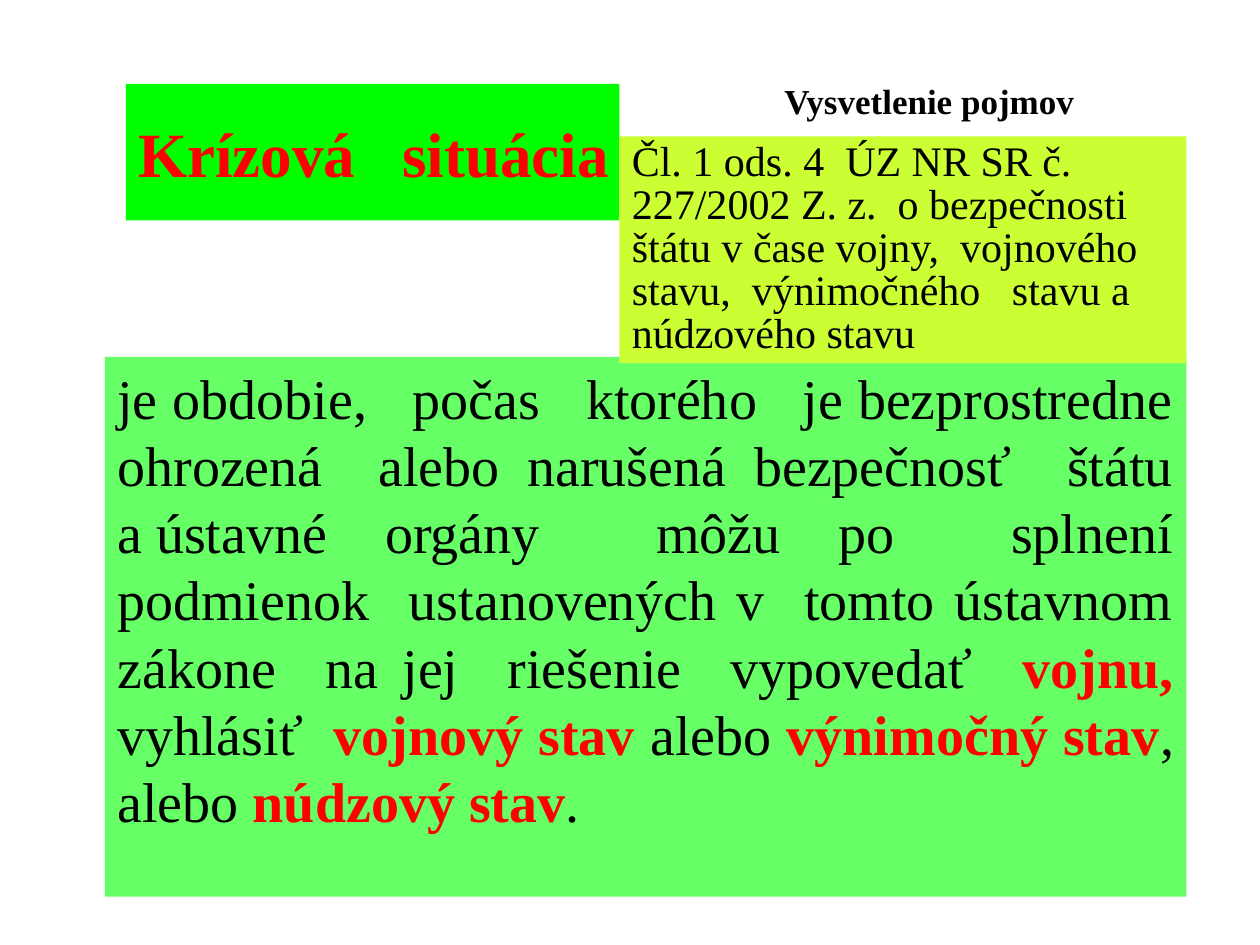
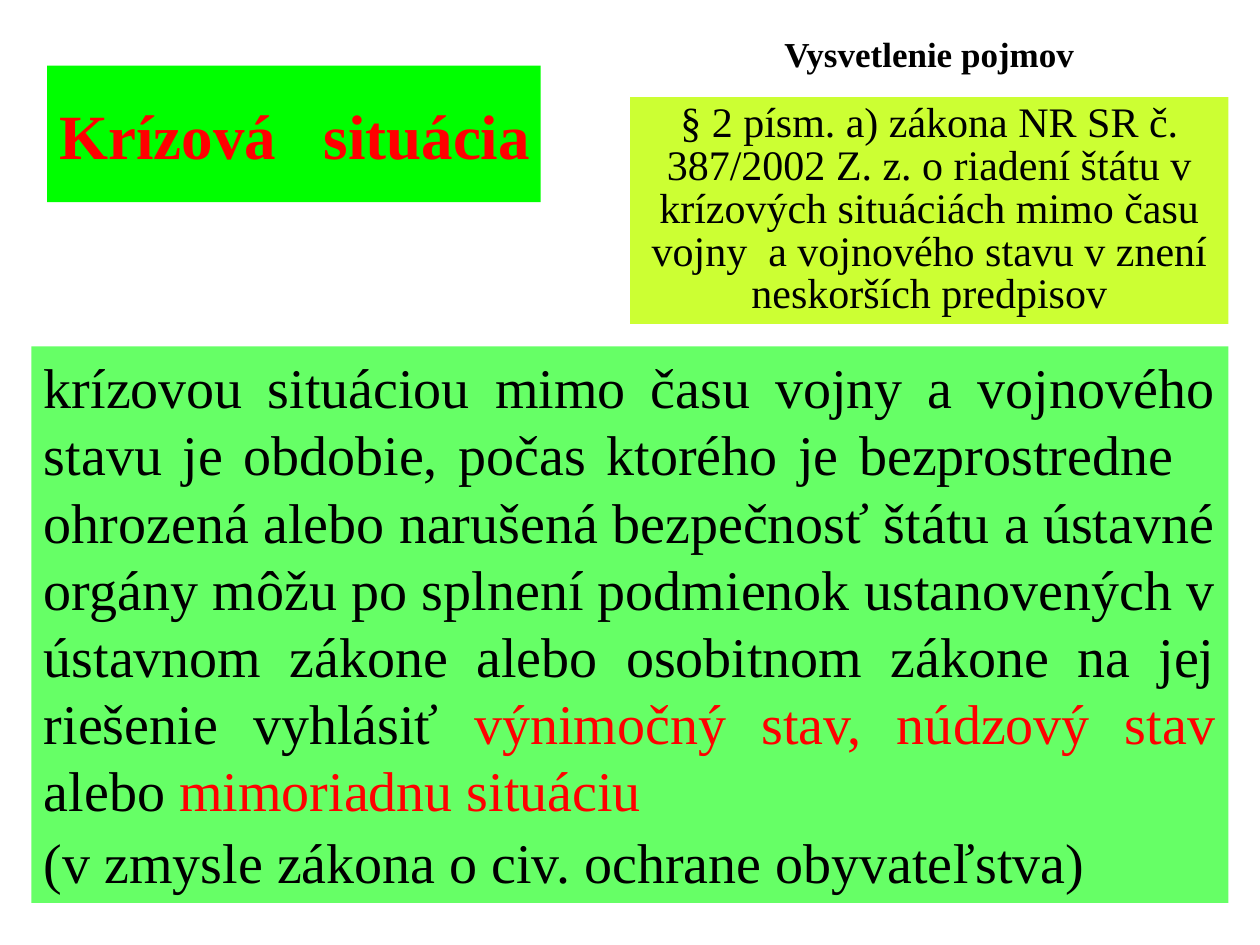
from dataclasses import dataclass

from pptx import Presentation
from pptx.dml.color import RGBColor as RGB
from pptx.enum.shapes import MSO_SHAPE as SHAPE
from pptx.enum.text import MSO_ANCHOR as ANCHOR, PP_ALIGN as ALIGN
from pptx.util import Inches, Pt

CELL = Inches(10) / 120
HARD_SPACE = chr(160)


@dataclass(frozen=True)
class Theme:
    """Colours, font and type sizes shared by the slides."""
    font: str = "Times New Roman"
    black: RGB = RGB(0x00, 0x00, 0x00)
    red: RGB = RGB(0xFF, 0x00, 0x00)
    term_fill: RGB = RGB(0x00, 0xFF, 0x00)
    text_fill: RGB = RGB(0x66, 0xFF, 0x66)
    law_fill: RGB = RGB(0xCC, 0xFF, 0x33)
    term_size: Pt = Pt(36)
    text_size: Pt = Pt(32)
    law_size: Pt = Pt(24)
    head_size: Pt = Pt(20)
    gap: Pt = Pt(16)


T = Theme()
PLAIN = {"color": T.black, "bold": False}
BOLD = {"color": T.black, "bold": True}
RED = {"color": T.red, "bold": False}
RED_BOLD = {"color": T.red, "bold": True}


def place(*cells):
    """Turn grid columns and rows into lengths."""
    return [round(c * CELL) for c in cells]


def apply(target, formats):
    """Set each attribute named in formats."""
    for name, value in formats.items():
        setattr(target, name, value)


def write(tf, size, paragraphs, **frame):
    """Fill a text frame from (paragraph format, runs) pairs."""
    apply(tf, {"word_wrap": True, "vertical_anchor": ANCHOR.TOP, **frame})
    for i, (formats, runs) in enumerate(paragraphs):
        p = tf.add_paragraph() if i else tf.paragraphs[0]
        apply(p, formats)
        for text, look in runs:
            r = p.add_run()
            r.text = text
            apply(r.font, {"name": T.font, "size": size, "bold": look["bold"]})
            r.font.color.rgb = look["color"]


def add_panel(slide, cells, fill, size, paragraphs, **frame):
    """Add a filled rectangle with text."""
    sp = slide.shapes.add_shape(SHAPE.RECTANGLE, *place(*cells))
    sp.shadow.inherit = False
    sp.fill.solid()
    sp.fill.fore_color.rgb = fill
    sp.line.fill.background()
    write(sp.text_frame, size, paragraphs, **frame)


def add_term(slide, left, top):
    """Add the panel that names the explained term."""
    runs = [("Krízová   situácia", RED_BOLD)]
    add_panel(slide, (left, top, 47, 13), T.term_fill, T.term_size,
              [({"alignment": ALIGN.LEFT}, runs)],
              word_wrap=False, vertical_anchor=ANCHOR.MIDDLE)


def add_definition(slide, cells, paragraphs):
    """Add the large panel with the justified definition."""
    add_panel(slide, cells, T.text_fill, T.text_size,
              [({"alignment": ALIGN.JUSTIFY, **formats}, runs)
               for formats, runs in paragraphs])


def add_law(slide, cells, text, align):
    """Add the panel that cites the law."""
    formats = {"alignment": align, "line_spacing": 0.85}
    add_panel(slide, cells, T.law_fill, T.law_size, [(formats, [(text, PLAIN)])])


def add_heading(slide, top):
    """Add the section heading at the upper right."""
    sp = slide.shapes.add_textbox(*place(61, top, 55, 5.2))
    write(sp.text_frame, T.head_size,
          [({"alignment": ALIGN.CENTER}, [("Vysvetlenie pojmov", BOLD)])])


def constitutional_slide(slide):
    """Explain the term by the constitutional act."""
    add_term(slide, 12, 8)
    add_definition(slide, (10, 34, 103, 51.4), [({}, [
        ("je obdobie,   počas   ktorého   je bezprostredne ohrozená  alebo "
         f"narušená bezpečnosť  štátu a{HARD_SPACE}ústavné orgány  môžu po  "
         "splnení podmienok  ustanovených v  tomto ústavnom zákone  na jej  "
         "riešenie  vypovedať  ", PLAIN),
        ("vojnu,", RED_BOLD), (" vyhlásiť  ", PLAIN),
        ("vojnový stav", RED_BOLD), (" alebo ", PLAIN),
        ("výnimočný stav", RED_BOLD), (", alebo ", PLAIN),
        ("núdzový stav", RED_BOLD), (".", PLAIN)])])
    add_law(slide, (59, 13, 54, 21.6),
            "Čl. 1 ods. 4  ÚZ NR SR č. 227/2002 Z. z.  o bezpečnosti štátu v "
            "čase vojny,  vojnového stavu,  výnimočného   stavu a núdzového "
            "stavu", ALIGN.LEFT)
    add_heading(slide, 7)


def crisis_management_slide(slide):
    """Explain the term by the act on crisis management."""
    add_term(slide, 4.5, 6.25)
    add_definition(slide, (3, 33, 114, 53), [
        ({}, [
            ("krízovou situáciou mimo času vojny a vojnového stavu je obdobie, "
             "počas ktorého je bezprostredne   ohrozená alebo narušená "
             "bezpečnosť štátu a ústavné orgány môžu po splnení podmienok "
             "ustanovených v ústavnom zákone alebo osobitnom zákone na jej "
             "riešenie vyhlásiť ", PLAIN),
            ("výnimočný stav, núdzový stav ", RED), ("alebo", PLAIN),
            (" mimoriadnu situáciu", RED)]),
        ({"line_spacing": 0.6, "space_before": T.gap},
         [("(v zmysle zákona o civ. ochrane obyvateľstva)", PLAIN)])])
    add_law(slide, (60, 9.25, 57, 21.6),
            "§ 2 písm. a) zákona NR SR č. 387/2002 Z. z. o riadení štátu v "
            "krízových situáciách mimo času vojny  a vojnového stavu v znení "
            "neskorších predpisov", ALIGN.CENTER)
    add_heading(slide, 2.5)


def main():
    """Build and save the presentation."""
    prs = Presentation()
    apply(prs, {"slide_width": Inches(10), "slide_height": Inches(7.5)})
    for build in (constitutional_slide, crisis_management_slide):
        build(prs.slides.add_slide(prs.slide_layouts[6]))
    prs.save("out.pptx")


if __name__ == "__main__":
    main()
